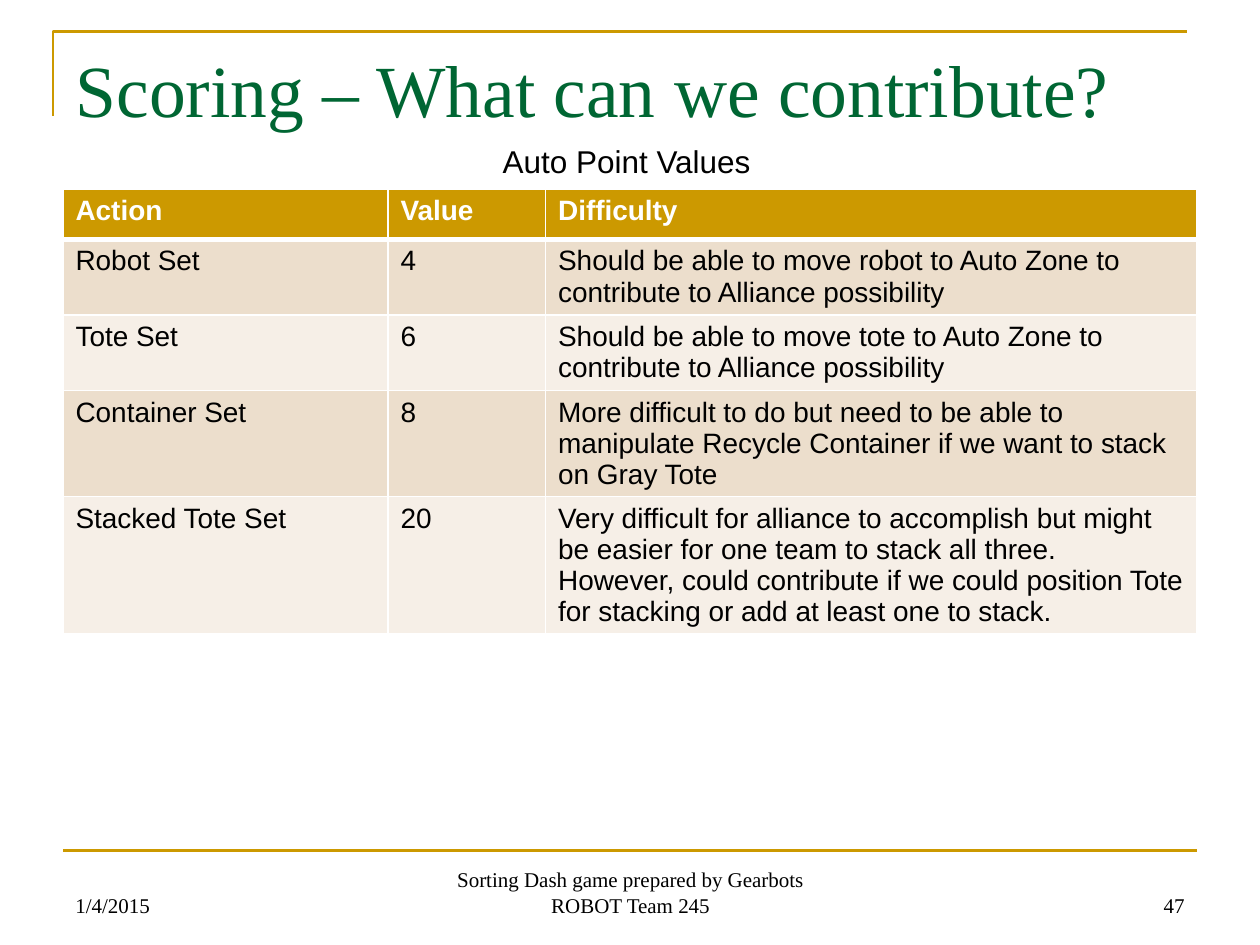
import pptx
import pptx.util
import pptx.dml.color
import pptx.enum.shapes
import pptx.enum.text
import pptx.oxml
import pptx.oxml.ns
from lxml import etree

Inches, Pt = pptx.util.Inches, pptx.util.Pt
ALIGN = pptx.enum.text.PP_ALIGN
ANCHOR = pptx.enum.text.MSO_ANCHOR

COLORS = {"gold": "CC9900", "green": "006633", "black": "000000", "white": "FFFFFF",
          "band_dark": "ECDECC", "band_light": "F6EFE7"}
SERIF, SANS = "Times New Roman", "Arial"
WIDTH, HEIGHT, MARGIN = 10, 7.5, 0.5

TITLE = "Scoring – What can we contribute?"
CAPTION = "Auto Point Values"
ROWS = [
    ("Action", "Value", "Difficulty"),
    ("Robot Set", "4",
     "Should be able to move robot to Auto Zone to contribute to Alliance possibility"),
    ("Tote Set", "6",
     "Should be able to move tote to Auto Zone to contribute to Alliance possibility"),
    ("Container Set", "8",
     "More difficult to do but need to be able to manipulate Recycle Container "
     "if we want to stack on Gray Tote"),
    ("Stacked Tote Set", "20",
     "Very difficult for alliance to accomplish but might be easier for one team to stack "
     "all three.  However, could contribute if we could position Tote for stacking or add "
     "at least one to stack."),
]
COLUMN_WIDTHS = (2.58, 1.25, 5.17)
ROW_HEIGHTS = (0.4, 0.6, 0.6, 0.84, 1.08)
FOOTERS = [  # text, left, width, alignment
    ("1/4/2015", MARGIN, 2.33, ALIGN.LEFT),
    ("Sorting Dash game prepared by Gearbots ROBOT Team 245", 3.42, 3.17, ALIGN.CENTER),
    ("47", WIDTH - MARGIN - 2.33, 2.33, ALIGN.RIGHT),
]


def rgb(name):
    return pptx.dml.color.RGBColor.from_string(COLORS[name])


def write(tf, text, size=16, font=SANS, color="black", bold=False,
          align=ALIGN.LEFT, anchor=ANCHOR.TOP, wrap=True):
    tf.word_wrap = wrap
    tf.vertical_anchor = anchor
    p = tf.paragraphs[0]
    p.alignment = align
    r = p.add_run()
    r.text = text
    r.font.size, r.font.name, r.font.bold = Pt(size), font, bold
    r.font.color.rgb = rgb(color)


def add_text(slide, text, left, top, width, height, **fmt):
    box = slide.shapes.add_textbox(*map(Inches, (left, top, width, height)))
    write(box.text_frame, text, **fmt)
    return box


def rule_style(sp):
    sp.line.color.rgb = rgb("gold")
    sp.line.width = Pt(1.5)


def set_borders(cell, bottom):
    tc_pr = cell._tc.get_or_add_tcPr()
    for side, width in (("L", 1), ("R", 1), ("T", 1), ("B", bottom)):
        ln = etree.SubElement(tc_pr, pptx.oxml.ns.qn(f"a:ln{side}"), w=str(Pt(width)))
        fill = etree.SubElement(ln, pptx.oxml.ns.qn("a:solidFill"))
        etree.SubElement(fill, pptx.oxml.ns.qn("a:srgbClr"), val=COLORS["white"])


def add_rules(slide):
    corner = slide.shapes.build_freeform(Inches(0.42), Inches(0.92))
    corner.add_line_segments([(Inches(0.42), Inches(0.25)), (Inches(9.42), Inches(0.25))],
                             close=False)
    sp = corner.convert_to_shape()
    sp.fill.background()
    sp.shadow.inherit = False
    rule_style(sp)
    y = Inches(HEIGHT * 0.9)
    line = slide.shapes.add_connector(pptx.enum.shapes.MSO_CONNECTOR.STRAIGHT,
                                      Inches(MARGIN), y, Inches(WIDTH - MARGIN), y)
    rule_style(line)
    etree.SubElement(line._element.spPr, pptx.oxml.ns.qn("a:effectLst"))


def add_score_table(slide):
    frame = slide.shapes.add_table(len(ROWS), len(COLUMN_WIDTHS), Inches(MARGIN), Inches(1.5),
                                   Inches(sum(COLUMN_WIDTHS)), Inches(sum(ROW_HEIGHTS)))
    table = frame.table
    for column, width in zip(table.columns, COLUMN_WIDTHS):
        column.width = Inches(width)
    for i, (texts, height) in enumerate(zip(ROWS, ROW_HEIGHTS)):
        table.rows[i].height = Inches(height)
        header = i == 0
        band = "gold" if header else "band_dark" if i % 2 else "band_light"
        for cell, text in zip(table.rows[i].cells, texts):
            set_borders(cell, bottom=3 if header else 1)
            cell.fill.solid()
            cell.fill.fore_color.rgb = rgb(band)
            write(cell.text_frame, text, color="white" if header else "black", bold=header)


def main():
    prs = pptx.Presentation()
    prs.slide_width, prs.slide_height = Inches(WIDTH), Inches(HEIGHT)
    slide = prs.slides.add_slide(prs.slide_layouts[5])
    add_rules(slide)

    title = slide.shapes.title
    title.left, title.top, title.width, title.height = map(
        Inches, (MARGIN, 0.3, WIDTH - 2 * MARGIN, 1.25))
    write(title.text_frame, TITLE, size=42, font=SERIF, color="green")
    title.text_frame.auto_size = pptx.enum.text.MSO_AUTO_SIZE.NONE

    add_score_table(slide)
    caption = add_text(slide, CAPTION, 3.89, 1.08, 2.19, 0.4, size=18, wrap=False)
    caption.text_frame.auto_size = pptx.enum.text.MSO_AUTO_SIZE.SHAPE_TO_FIT_TEXT
    for text, left, width, align in FOOTERS:
        add_text(slide, text, left, 6.83, width, 0.5, size=12, font=SERIF,
                 align=align, anchor=ANCHOR.BOTTOM)
    prs.save("out.pptx")


if __name__ == "__main__":
    main()
